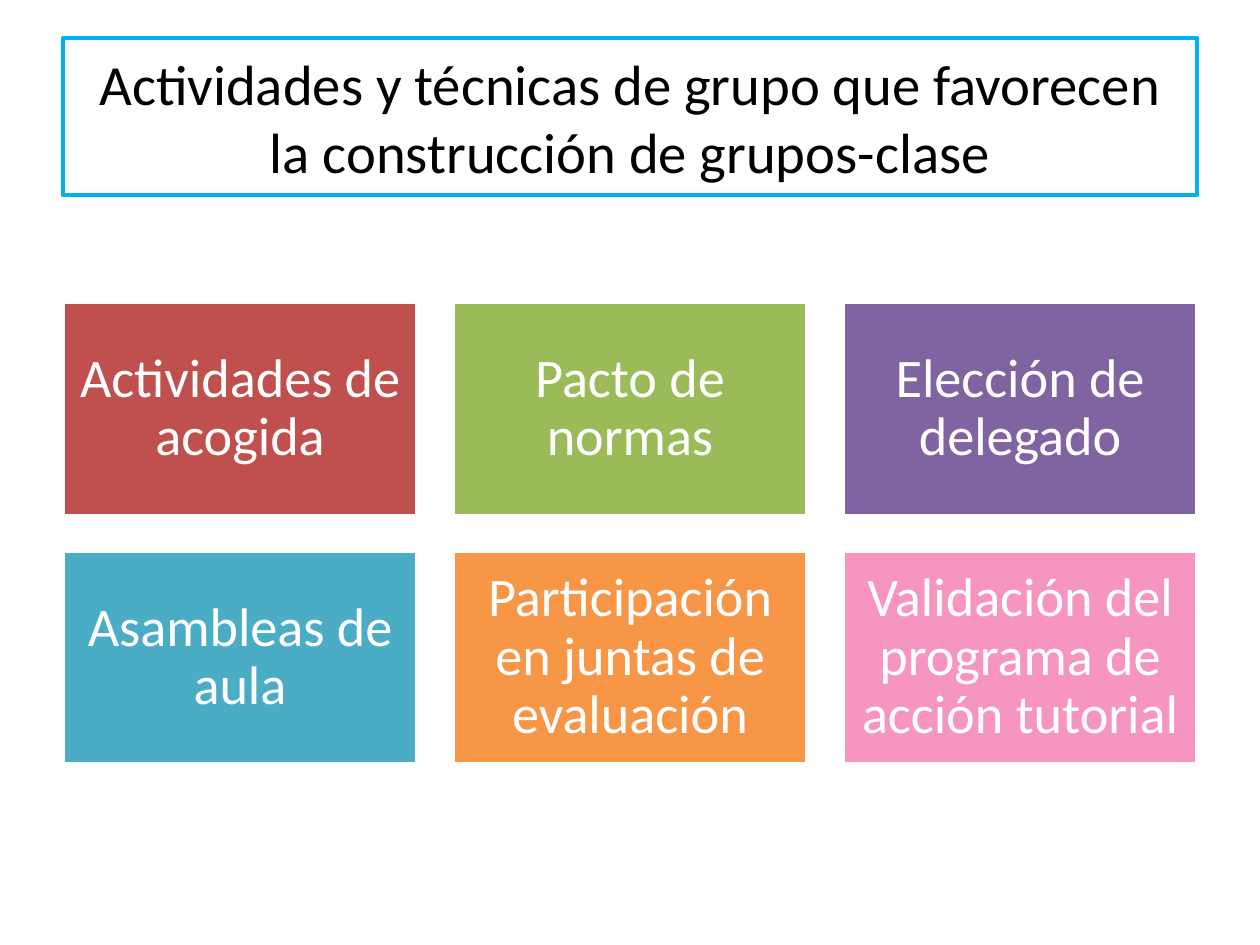
from dataclasses import dataclass

from pptx import Presentation
from pptx.dml.color import RGBColor
from pptx.enum.shapes import MSO_SHAPE
from pptx.enum.text import MSO_ANCHOR, PP_ALIGN
from pptx.util import Inches, Pt

RECT = MSO_SHAPE.RECTANGLE
MIDDLE = MSO_ANCHOR.MIDDLE
CENTER = PP_ALIGN.CENTER

TITLE = "Actividades y técnicas de grupo que favorecen la construcción de grupos-clase"
ACTIVITIES = [
    ("Actividades de acogida", "C0504D"),
    ("Pacto de normas", "9BBB59"),
    ("Elección de delegado", "8064A2"),
    ("Asambleas de aula", "4BACC6"),
    ("Participación en juntas de evaluación", "F79646"),
    ("Validación del programa de acción tutorial", "F595C0"),
]
COLUMNS = 3
LEFT, TOP, WIDTH = 0.5, 2.4, 9
CARD_W, CARD_H = 2.81, 1.69
GAP = (WIDTH - COLUMNS * CARD_W) / (COLUMNS - 1)


@dataclass(frozen=True)
class Theme:
    font: str = "Calibri"
    title_size: float = 32.4
    card_size: float = 31
    title_color: str = "000000"
    title_border: str = "00B0F0"
    white: str = "FFFFFF"


def set_all(obj, values):
    for name, value in values.items():
        setattr(obj, name, value)


class SlideBuilder:
    def __init__(self, slide, theme):
        self.slide = slide
        self.theme = theme

    def box(self, x, y, w, h, line, line_width, fill=None):
        sp = self.slide.shapes.add_shape(RECT, Inches(x), Inches(y), Inches(w), Inches(h))
        sp.shadow.inherit = False
        if fill:
            sp.fill.solid()
            sp.fill.fore_color.rgb = RGBColor.from_string(fill)
        else:
            sp.fill.background()
        sp.line.color.rgb = RGBColor.from_string(line)
        sp.line.width = Pt(line_width)
        return sp

    def label(self, sp, text, size, color, margins, spacing):
        tf = sp.text_frame
        set_all(tf, {"word_wrap": True, "vertical_anchor": MIDDLE, **margins})
        p = tf.paragraphs[0]
        set_all(p, {"alignment": CENTER, "line_spacing": spacing})
        r = p.add_run()
        r.text = text
        set_all(r.font, {"name": self.theme.font, "size": Pt(size)})
        r.font.color.rgb = RGBColor.from_string(color)

    def title(self, text):
        t = self.theme
        sp = self.box(LEFT, 0.3, WIDTH, 1.25, t.title_border, 2.25)
        self.label(sp, text, t.title_size, t.title_color, {}, 1.0)

    def card(self, x, y, text, fill):
        t = self.theme
        sp = self.box(x, y, CARD_W, CARD_H, t.white, 2, fill)
        sides = ("left", "top", "right", "bottom")
        margins = {f"margin_{side}": Inches(0.13) for side in sides}
        self.label(sp, text, t.card_size, t.white, margins, 0.9)


def main():
    prs = Presentation()
    set_all(prs, {"slide_width": Inches(10), "slide_height": Inches(7.5)})
    s = SlideBuilder(prs.slides.add_slide(prs.slide_layouts[6]), Theme())
    s.title(TITLE)
    for i, (text, fill) in enumerate(ACTIVITIES):
        row, col = divmod(i, COLUMNS)
        s.card(LEFT + col * (CARD_W + GAP), TOP + row * (CARD_H + GAP), text, fill)
    prs.save("out.pptx")


if __name__ == "__main__":
    main()
